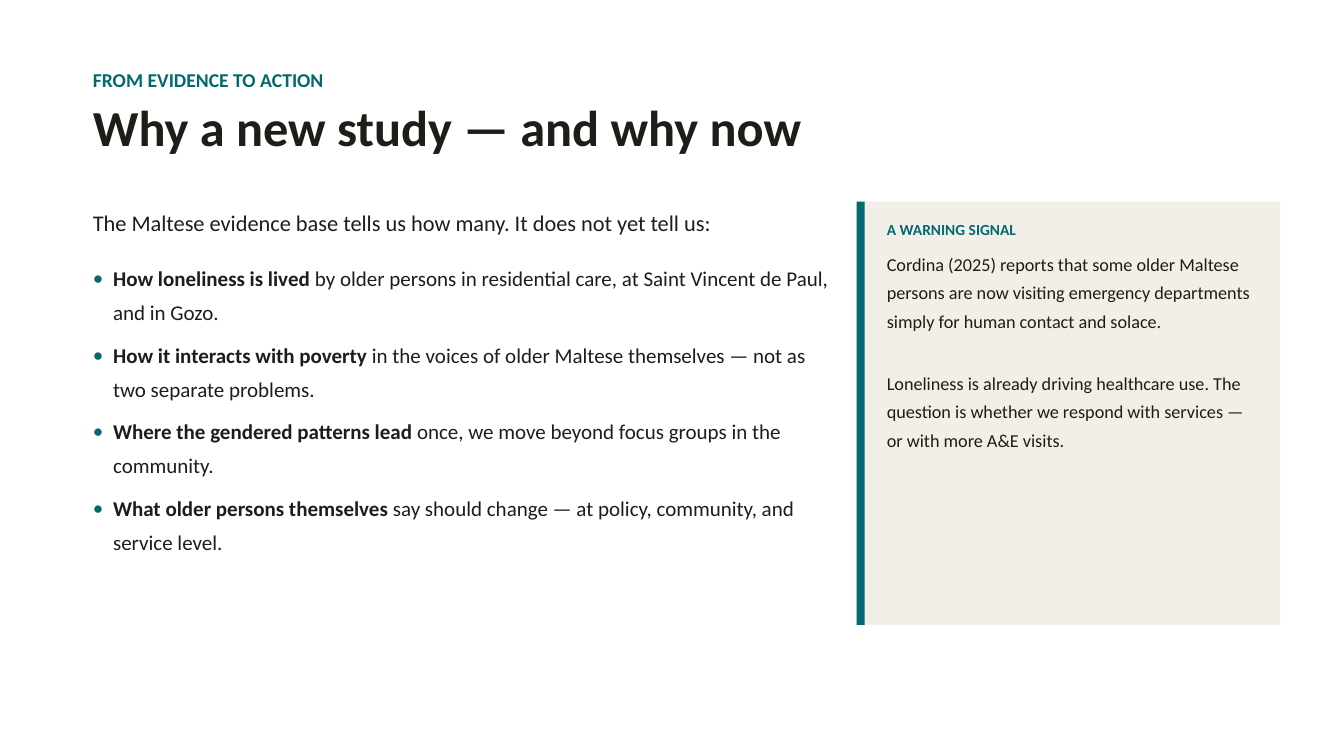
import pptx
import pptx.util
import pptx.dml.color
import pptx.enum.shapes
import pptx.enum.text
import pptx.oxml.ns
import lxml.etree
from dataclasses import dataclass

Cm, Pt = pptx.util.Cm, pptx.util.Pt

KICKER = "FROM EVIDENCE TO ACTION"
TITLE = "Why a new study — and why now"
INTRO = "The Maltese evidence base tells us how many. It does not yet tell us:"
GAPS = [
    ("How loneliness is lived",
     " by older persons in residential care, at Saint Vincent de Paul, and in Gozo."),
    ("How it interacts with poverty",
     " in the voices of older Maltese themselves — not as two separate problems."),
    ("Where the gendered patterns lead",
     " once, we move beyond focus groups in the community."),
    ("What older persons themselves",
     " say should change — at policy, community, and service level."),
]
SIGNAL = "A WARNING SIGNAL"
NOTES = [
    "Cordina (2025) reports that some older Maltese persons are now visiting "
    "emergency departments simply for human contact and solace.",
    "Loneliness is already driving healthcare use. The question is whether we "
    "respond with services — or with more A&E visits.",
]


@dataclass(frozen=True)
class Theme:
    font: str = "Calibri"
    teal: str = "01696F"
    ink: str = "1F1D17"
    sand: str = "F2EFE8"
    title: int = 36
    intro: int = 16
    item: int = 15
    kicker: int = 14
    note: int = 13
    label: int = 11


THEME = Theme()

# Left, top, width and height in centimetres
LEFT, TOP, WIDE = 2.34, 5.08, 18.54
HEAD_BOX = (LEFT, 1.02, 29.21, 3.68)
INTRO_BOX = (LEFT, TOP, WIDE, 1.27)
LIST_BOX = (LEFT, 6.48, WIDE, 7.49)
CARD_BOX = (21.59, TOP, 10.67, 10.67)
BAR_BOX = (21.59, TOP, 0.2, 10.67)
NOTE_BOX = (22.35, 5.54, 9.4, 9.91)
HANG = 0.51


def tint(hue):
    return pptx.dml.color.RGBColor.from_string(hue)


def place(shape, box):
    shape.left, shape.top, shape.width, shape.height = map(Cm, box)


def set_frame(frame, pad=0.0, anchor=pptx.enum.text.MSO_ANCHOR.TOP):
    frame.word_wrap = True
    frame.auto_size = pptx.enum.text.MSO_AUTO_SIZE.NONE
    frame.margin_left = frame.margin_right = 0
    frame.margin_top = frame.margin_bottom = Cm(pad)
    frame.vertical_anchor = anchor


def style(run, size, hue, bold=False):
    font = run.font
    font.name, font.size, font.bold = THEME.font, Pt(size), bold
    font.color.rgb = tint(hue)


def space(para, line, before=0, after=0):
    para.alignment = pptx.enum.text.PP_ALIGN.LEFT
    para.line_spacing = line
    para.space_before, para.space_after = Pt(before), Pt(after)


def fill_lines(frame, lines):
    """Write one paragraph per (text, size, hue, bold, line, before)."""
    frame.text = "\n".join(line[0] for line in lines)
    for para, (_, size, hue, bold, line, before) in zip(frame.paragraphs, lines):
        space(para, line, before)
        style(para.runs[0], size, hue, bold)


def add_bullet(para):
    props = para._p.get_or_add_pPr()
    props.set("marL", str(Cm(HANG)))
    props.set("indent", str(-Cm(HANG)))
    qn = pptx.oxml.ns.qn
    hue = lxml.etree.SubElement(props, qn("a:buClr"))
    lxml.etree.SubElement(hue, qn("a:srgbClr"), val=THEME.teal)
    lxml.etree.SubElement(props, qn("a:buFont"), typeface=THEME.font)
    lxml.etree.SubElement(props, qn("a:buChar"), char="•")


def add_text(slide, box, lines):
    frame = slide.shapes.add_textbox(*map(Cm, box)).text_frame
    set_frame(frame)
    fill_lines(frame, lines)


def add_block(slide, box, hue):
    kind = pptx.enum.shapes.MSO_SHAPE.RECTANGLE
    block = slide.shapes.add_shape(kind, *map(Cm, box))
    block.shadow.inherit = False
    block.fill.solid()
    block.fill.fore_color.rgb = tint(hue)
    block.line.fill.background()


def fill_head(shape):
    place(shape, HEAD_BOX)
    set_frame(shape.text_frame, 0.13, pptx.enum.text.MSO_ANCHOR.MIDDLE)
    fill_lines(shape.text_frame, [
        (KICKER, THEME.kicker, THEME.teal, True, 0.9, 0),
        (TITLE, THEME.title, THEME.ink, True, 0.9, 8),
    ])


def fill_list(shape):
    place(shape, LIST_BOX)
    frame = shape.text_frame
    set_frame(frame)
    frame.text = "\n".join(lead for lead, _ in GAPS)
    for para, (_, rest) in zip(frame.paragraphs, GAPS):
        add_bullet(para)
        space(para, 1.35, after=6)
        style(para.runs[0], THEME.item, THEME.ink, True)
        tail = para.add_run()
        tail.text = rest
        style(tail, THEME.item, THEME.ink)


def main():
    deck = pptx.Presentation()
    deck.slide_width, deck.slide_height = Cm(33.87), Cm(19.05)
    slide = deck.slides.add_slide(deck.slide_layouts[1])
    fill_head(slide.shapes.title)
    add_text(slide, INTRO_BOX, [(INTRO, THEME.intro, THEME.ink, False, 1.3, 0)])
    fill_list(slide.placeholders[1])
    add_block(slide, CARD_BOX, THEME.sand)
    add_block(slide, BAR_BOX, THEME.teal)
    first, last = NOTES
    add_text(slide, NOTE_BOX, [
        (SIGNAL, THEME.label, THEME.teal, True, 1.0, 0),
        (first, THEME.note, THEME.ink, False, 1.3, 6),
        (last, THEME.note, THEME.ink, False, 1.3, 24),
    ])
    deck.save("out.pptx")


if __name__ == "__main__":
    main()
